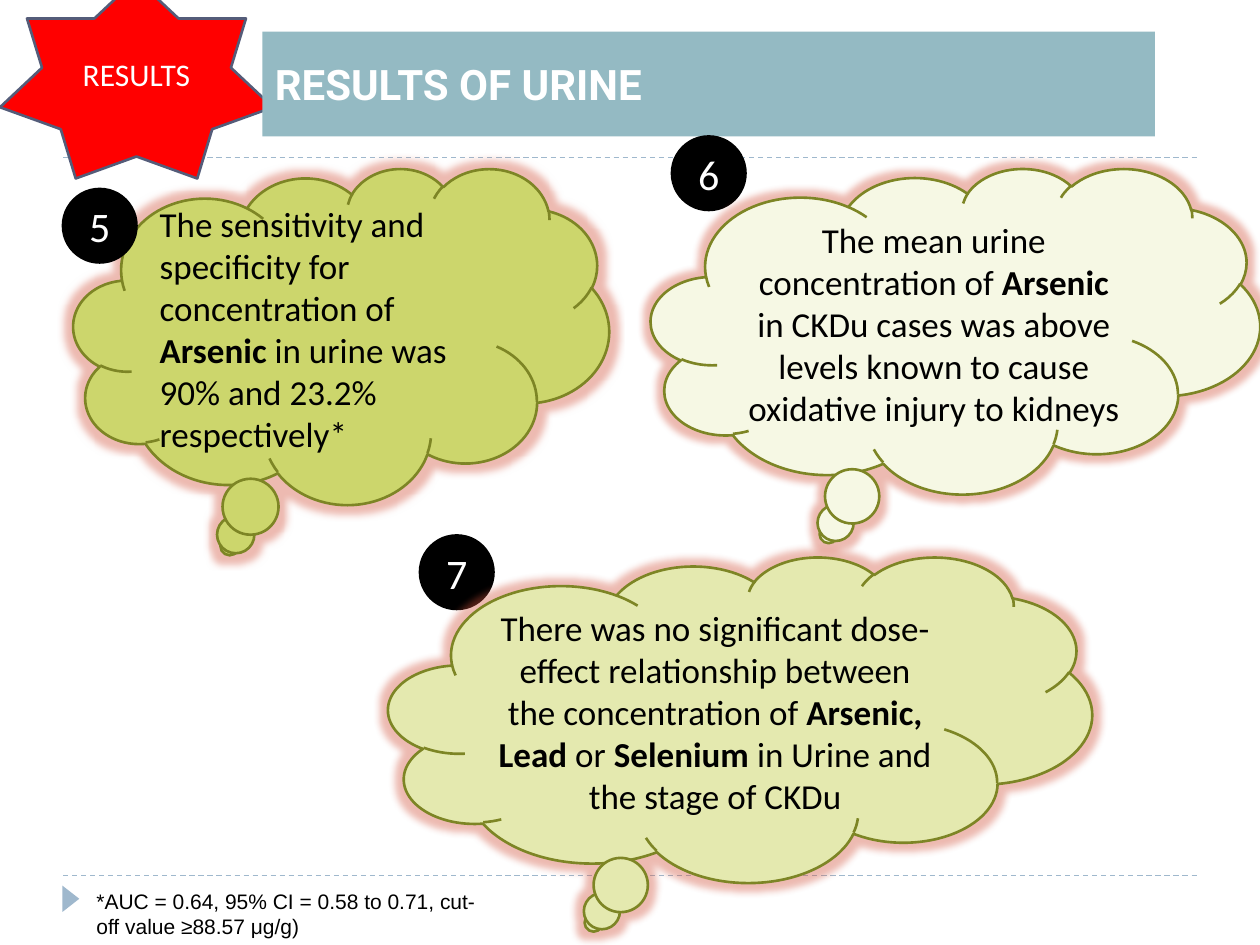
"""Build the slide on urine results, with three numbered thought clouds."""
import pptx
import pptx.dml.color
import pptx.enum.dml
import pptx.enum.shapes
import pptx.enum.text
import pptx.oxml
import pptx.oxml.ns
import pptx.util

COLORS = {
    "rule": "9FB8CD", "star": "FF0000", "star_edge": "545C79", "banner": "94BAC3",
    "white": "FFFFFF", "black": "000000", "cloud_edge": "7D8525", "glow": "D2533C",
    "sensitivity": "CCD66C", "mean": "F6F8E4", "dose": "E4E9AF",
}
PRESETS = pptx.enum.shapes.MSO_SHAPE
ALIGN = pptx.enum.text.PP_ALIGN
NAMESPACE = pptx.oxml.ns.nsdecls("a")

deck = pptx.Presentation()
deck.slide_width, deck.slide_height = pptx.util.Inches(10), pptx.util.Inches(7.5)
CELL = deck.slide_width / 120
slide = deck.slides.add_slide(deck.slide_layouts[6])


def draw(preset, grid_box, fill, edge=None):
    shape = slide.shapes.add_shape(preset, *[round(cells * CELL) for cells in grid_box])
    shape.shadow.inherit = False
    shape.fill.solid()
    shape.fill.fore_color.rgb = pptx.dml.color.RGBColor.from_string(COLORS[fill])
    if edge:
        shape.line.color.rgb = pptx.dml.color.RGBColor.from_string(COLORS[edge])
        shape.line.width = pptx.util.Pt(1.5)
    else:
        shape.line.fill.background()
    return shape


def write(shape, runs, size, color, font="Calibri", align=ALIGN.CENTER):
    shape.text_frame.word_wrap = True
    paragraph = shape.text_frame.paragraphs[0]
    paragraph.alignment = align
    for wording, bold in runs:
        run = paragraph.add_run()
        run.text = wording
        run.font.name, run.font.size, run.font.bold = font, pptx.util.Pt(size), bold
        run.font.color.rgb = pptx.dml.color.RGBColor.from_string(COLORS[color])


for row in (83.4, 15):
    rule = slide.shapes.add_connector(
        pptx.enum.shapes.MSO_CONNECTOR.STRAIGHT,
        *[round(cells * CELL) for cells in (6, row, 114, row)])
    rule.line.color.rgb = pptx.dml.color.RGBColor.from_string(COLORS["rule"])
    rule.line.width = pptx.util.Pt(0.75)
    rule.line.dash_style = pptx.enum.dml.MSO_LINE.DASH
    rule._element.spPr.append(pptx.oxml.parse_xml(f"<a:effectLst {NAMESPACE}/>"))

marker = draw(PRESETS.ISOSCELES_TRIANGLE, (5.5, 84.8, 2.5, 1.6), "rule")
marker.rotation = 90

star = draw(PRESETS.STAR_7_POINT, (0, -2, 26, 19), "star", "star_edge")
write(star, [("RESULTS", False)], 18, "white")

banner = draw(PRESETS.RECTANGLE, (25, 3, 85, 10), "banner")
write(banner, [("RESULTS OF URINE", True)], 24, "white", "Roboto", ALIGN.LEFT)

footnote = slide.shapes.add_textbox(*[round(cells * CELL) for cells in (8, 84, 40, 6)])
write(footnote, [("*AUC = 0.64, 95% CI = 0.58 to 0.71, cut-off value ≥88.57 μg/g)", False)],
      12, "black", "Arial", ALIGN.LEFT)

findings = [
    ("5", (6, 18), True, (7, 16, 51, 32), "sensitivity", ALIGN.LEFT, [
        ("The sensitivity and specificity for concentration of ", False),
        ("Arsenic ", True),
        ("in urine was 90% and 23.2% respectively*", False)]),
    ("6", (64, 13), False, (62, 16, 58, 31), "mean", ALIGN.CENTER, [
        ("The mean urine concentration of ", False),
        ("Arsenic ", True),
        ("in CKDu cases was above levels known to cause oxidative injury to kidneys", False)]),
    ("7", (40, 51), False, (37, 53, 67, 31), "dose", ALIGN.CENTER, [
        ("There was no significant dose-effect relationship between the concentration of ", False),
        ("Arsenic, Lead", True),
        (" or ", False),
        ("Selenium", True),
        (" in Urine and the stage of CKDu", False)]),
]
for number, corner, badge_on_top, cloud_box, fill, align, runs in findings:
    for part in ("cloud", "badge") if badge_on_top else ("badge", "cloud"):
        if part == "badge":
            badge = draw(PRESETS.OVAL, (*corner, 7, 7), "black", "black")
            write(badge, [(number, False)], 24, "white")
        else:
            cloud = draw(PRESETS.CLOUD_CALLOUT, cloud_box, fill, "cloud_edge")
            write(cloud, runs, 20, "black", align=align)
            effects = cloud._element.spPr.find(pptx.oxml.ns.qn("a:effectLst"))
            effects.append(pptx.oxml.parse_xml(
                f'<a:glow {NAMESPACE} rad="101600"><a:srgbClr val="{COLORS["glow"]}">'
                '<a:alpha val="40000"/></a:srgbClr></a:glow>'))

deck.save("out.pptx")
